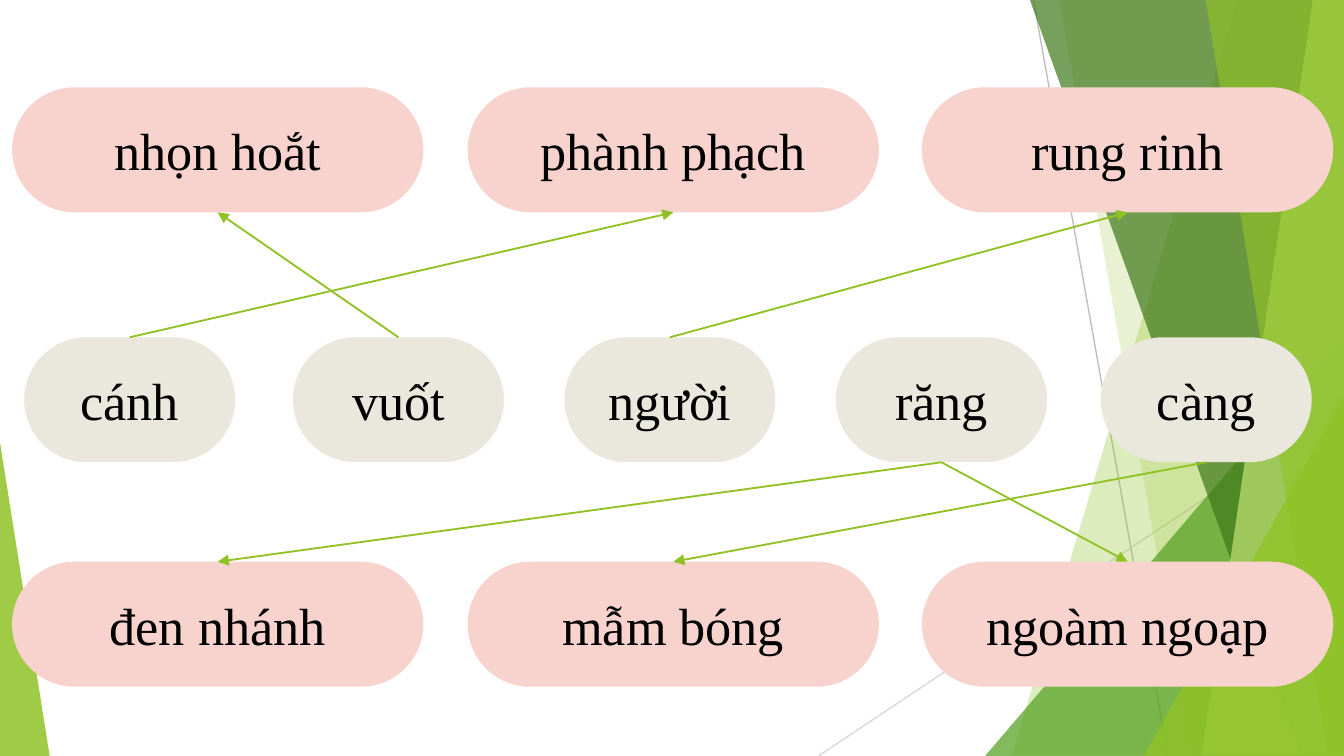
from lxml.etree import SubElement
from pptx import Presentation
from pptx.dml.color import RGBColor
from pptx.enum.shapes import MSO_CONNECTOR, MSO_SHAPE
from pptx.enum.text import MSO_ANCHOR, PP_ALIGN
from pptx.oxml.ns import qn
from pptx.util import Inches, Pt

WIDTH = 10
HEIGHT = WIDTH * 9 / 16
GREEN, PINK, BEIGE = "90C226", "F8D2CC", "EAE8DC"
TOP, BOTTOM = 0, 2  # connection sites of a pill


def color(value):
    return RGBColor.from_string(value)


class SlideBuilder:
    font = {"name": "Times New Roman", "size": Pt(28)}
    text_color = "000000"
    pill_height = 0.93

    def __init__(self, slide):
        self.slide = slide
        self.shapes = slide.shapes

    def paint(self, sp, fill, opacity=100):
        sp.shadow.inherit = False
        sp.line.fill.background()
        sp.fill.solid()
        sp.fill.fore_color.rgb = color(fill)
        if opacity < 100:
            clr = sp.fill._xPr.find(qn("a:solidFill"))[0]
            SubElement(clr, qn("a:alpha")).set("val", str(opacity * 1000))

    def band(self, top_x, bottom_x, fill, opacity):
        """Full-height band from a slanted left edge to the right slide edge."""
        points = [(top_x, -0.01), (WIDTH, -0.01), (WIDTH, 5.62), (bottom_x, 5.62)]
        points = [(Inches(x), Inches(y)) for x, y in points]
        fb = self.shapes.build_freeform(*points[0], scale=1.0)
        fb.add_line_segments(points[1:], close=True)
        self.paint(fb.convert_to_shape(), fill, opacity)

    def triangle(self, x, y, width, apex, fill, opacity):
        """Triangle standing on the bottom slide edge."""
        sp = self.shapes.add_shape(MSO_SHAPE.ISOSCELES_TRIANGLE, Inches(x), Inches(y),
                                   Inches(width), Inches(HEIGHT - y))
        sp.adjustments[0] = apex
        self.paint(sp, fill, opacity)

    def line(self, x1, y1, x2, y2, stroke, width):
        cxn = self.shapes.add_connector(MSO_CONNECTOR.STRAIGHT, Inches(x1), Inches(y1),
                                        Inches(x2), Inches(y2))
        cxn.line.color.rgb = color(stroke)
        cxn.line.width = Pt(width)
        SubElement(cxn._element.spPr, qn("a:effectLst"))
        return cxn

    def pill(self, text, x, y, width, fill):
        sp = self.shapes.add_shape(MSO_SHAPE.ROUNDED_RECTANGLE, Inches(x), Inches(y),
                                   Inches(width), Inches(self.pill_height))
        sp.adjustments[0] = 0.5
        self.paint(sp, fill)
        tf = sp.text_frame
        tf.word_wrap = True
        tf.vertical_anchor = MSO_ANCHOR.MIDDLE
        p = tf.paragraphs[0]
        p.alignment = PP_ALIGN.CENTER
        r = p.add_run()
        r.text = text
        for name, value in self.font.items():
            setattr(r.font, name, value)
        r.font.color.rgb = color(self.text_color)
        return sp

    def arrow(self, start, start_site, end, end_site):
        cxn = self.line(0, 0, 1, 1, GREEN, 1)
        cxn.begin_connect(start, start_site)
        cxn.end_connect(end, end_site)
        SubElement(cxn.line._get_or_add_ln(), qn("a:tailEnd")).set("type", "triangle")


def main():
    prs = Presentation()
    prs.slide_width, prs.slide_height = Inches(WIDTH), Inches(HEIGHT)
    s = SlideBuilder(prs.slides.add_slide(prs.slide_layouts[6]))

    # Background facets
    s.line(7.69, 0, 8.69, HEIGHT, "BFBFBF", 0.75)
    s.line(WIDTH, 3.02, 6.09, HEIGHT, "D9D9D9", 0.75)
    s.band(9.21, 7.53, GREEN, 30)
    s.band(7.88, 8.87, GREEN, 20)
    s.triangle(7.33, 2.5, 2.67, 1, "54A021", 72)
    s.band(7.66, 9.68, "3F7819", 70)
    s.band(9.77, 8.94, "C0E474", 70)
    s.band(8.97, 9.88, GREEN, 65)
    s.triangle(8.51, 2.94, 1.49, 1, GREEN, 80)
    s.triangle(0, 3.29, 0.37, 0, GREEN, 85)

    # Word pills
    wide, narrow = (0.09, 3.48, 6.86), (0.18, 2.18, 4.2, 6.22, 8.19)
    rows = [
        (0.65, 3.06, PINK, wide, ["nhọn hoắt", "phành phạch", "rung rinh"]),
        (2.51, 1.57, BEIGE, narrow, ["cánh", "vuốt", "người", "răng", "càng"]),
        (4.18, 3.06, PINK, wide, ["đen nhánh", "mẫm bóng", "ngoàm ngoạp"]),
    ]
    pills = {}
    for y, width, fill, lefts, words in rows:
        for x, word in zip(lefts, words):
            pills[word] = s.pill(word, x, y, width, fill)

    # Matching arrows, upwards and downwards
    upward = [("vuốt", "nhọn hoắt"), ("cánh", "phành phạch"), ("người", "rung rinh")]
    downward = [("càng", "mẫm bóng"), ("răng", "đen nhánh"), ("răng", "ngoàm ngoạp")]
    for pairs, start_site, end_site in [(upward, TOP, BOTTOM), (downward, BOTTOM, TOP)]:
        for noun, adjective in pairs:
            s.arrow(pills[noun], start_site, pills[adjective], end_site)

    prs.save("out.pptx")


if __name__ == "__main__":
    main()
